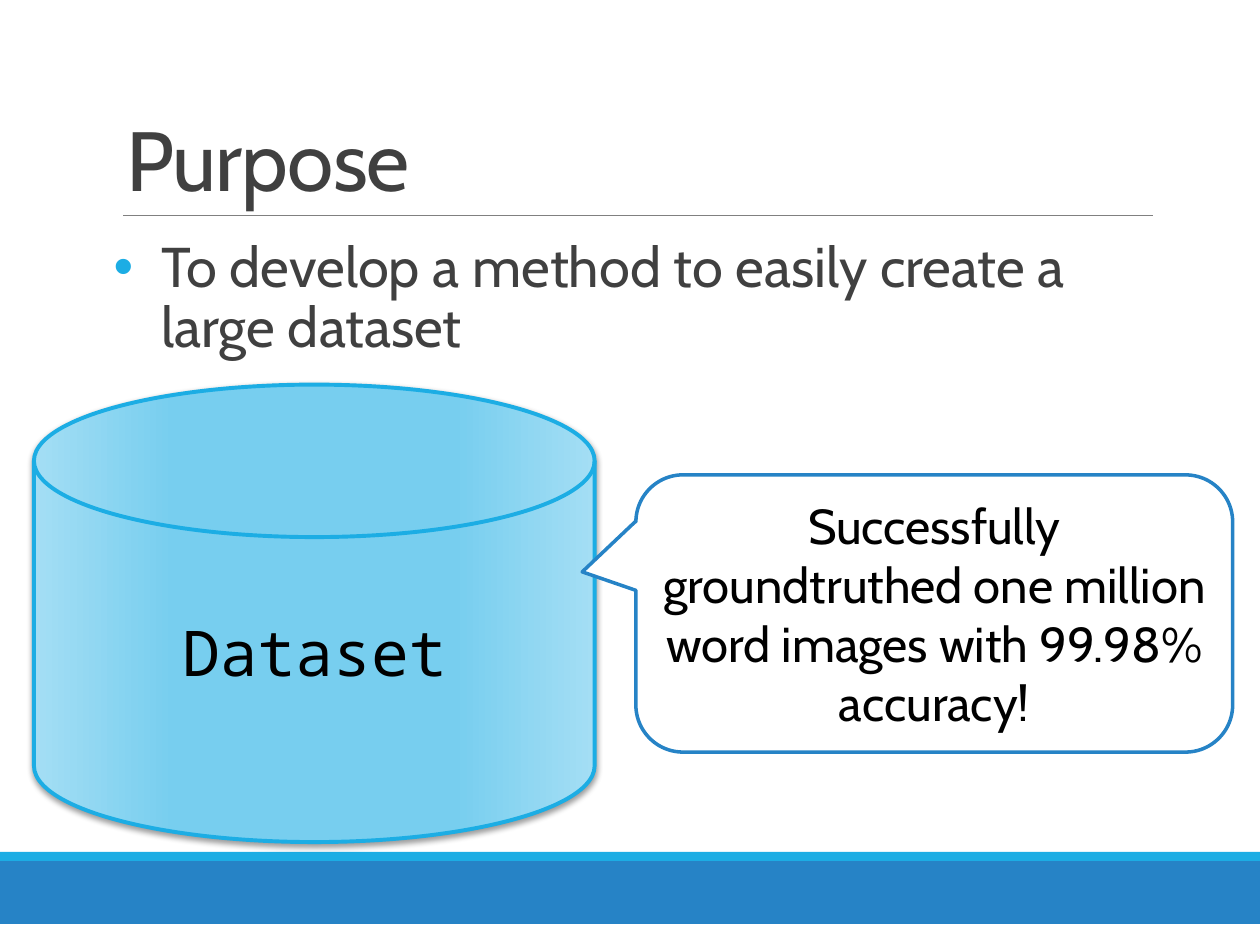
"""Build the Purpose slide with its dataset drum and result callout."""
from dataclasses import dataclass

from lxml import etree
from pptx import Presentation
from pptx import util as u
from pptx.dml.color import RGBColor
from pptx.enum import shapes, text
from pptx.oxml import ns

Pt = u.Pt
COLORS = {
    "blue": "2683C6", "cyan": "1CADE4", "pale": "A4DEF4", "sky": "77CEEF",
    "rule": "808080", "gray": "404040", "black": "000000", "white": "FFFFFF",
}
WIDTH, HEIGHT = 720, 540
DRUM_STOPS = {0: "pale", 25: "sky", 50: "sky", 75: "sky", 100: "pale"}


@dataclass(frozen=True)
class Box:
    left: float
    top: float
    width: float
    height: float

    def lengths(self) -> tuple:
        return tuple(Pt(value) for value in (self.left, self.top, self.width, self.height))


@dataclass(frozen=True)
class Words:
    content: str
    size: float
    color: str
    font: str = "Cabin"


def rgb(name: str) -> RGBColor:
    """Return the named colour."""
    return RGBColor.from_string(COLORS[name])


def add_element(parent, tag: str, **attributes: str):
    """Append a drawing element with its attributes."""
    return etree.SubElement(parent, ns.qn(tag), attributes)


def set_all(target, values: dict) -> None:
    """Set every attribute given in the dict."""
    for name, value in values.items():
        setattr(target, name, value)


def write(shape, words: Words, frame_format: dict, paragraph_format: dict):
    """Write one formatted paragraph and return it."""
    set_all(shape.text_frame, {"word_wrap": True, **frame_format})
    paragraph = shape.text_frame.paragraphs[0]
    set_all(paragraph, paragraph_format)
    run = paragraph.add_run()
    run.text = words.content
    set_all(run.font, {"name": words.font, "size": Pt(words.size)})
    run.font.color.rgb = rgb(words.color)
    return paragraph


def add_shape(slide, kind, box: Box, fill: str, line: str = "", weight: float = 0):
    """Add a preset shape with a flat fill and an optional outline."""
    shape = slide.shapes.add_shape(kind, *box.lengths())
    shape.shadow.inherit = False
    shape.fill.solid()
    shape.fill.fore_color.rgb = rgb(fill)
    if line:
        shape.line.color.rgb = rgb(line)
        shape.line.width = Pt(weight)
    else:
        shape.line.fill.background()
    return shape


def add_rule(slide, left: float, right: float, top: float) -> None:
    """Add the thin rule under the title."""
    rule = slide.shapes.add_connector(
        shapes.MSO_CONNECTOR.STRAIGHT, Pt(left), Pt(top), Pt(right), Pt(top))
    rule.line.color.rgb = rgb("rule")
    rule.line.width = Pt(0.5)
    add_element(rule._element.spPr, "a:effectLst")


def add_bullet(paragraph, color: str, indent: float) -> None:
    """Give the paragraph a coloured hanging bullet."""
    properties = paragraph._p.get_or_add_pPr()
    properties.set("marL", str(Pt(indent)))
    properties.set("indent", str(-Pt(indent)))
    add_element(add_element(properties, "a:buClr"), "a:srgbClr", val=COLORS[color])
    add_element(properties, "a:buFont", typeface="Arial")
    add_element(properties, "a:buChar", char="•")


def shade(shape, stops: dict) -> None:
    """Fill the shape from left to right with the colour stops."""
    shape.fill.gradient()
    shape.fill.gradient_angle = 0
    stop_list = shape._element.spPr.find(".//" + ns.qn("a:gsLst"))
    for stop in list(stop_list):
        stop_list.remove(stop)
    for position, color in stops.items():
        stop = add_element(stop_list, "a:gs", pos=str(position * 1000))
        add_element(stop, "a:srgbClr", val=COLORS[color])


def add_shadow(shape, blur: float, distance: float, opacity: int) -> None:
    """Drop a soft black shadow straight below the shape."""
    effects = shape._element.spPr.find(ns.qn("a:effectLst"))
    shadow = add_element(effects, "a:outerShdw", blurRad=str(Pt(blur)), dist=str(Pt(distance)),
                         dir="5400000", rotWithShape="0")
    color = add_element(shadow, "a:srgbClr", val=COLORS["black"])
    add_element(color, "a:alpha", val=str(opacity * 1000))


def main() -> None:
    """Draw the slide and save it."""
    presentation = Presentation()
    set_all(presentation, {"slide_width": Pt(WIDTH), "slide_height": Pt(HEIGHT)})
    slide = presentation.slides.add_slide(presentation.slide_layouts[6])
    preset = shapes.MSO_SHAPE
    centered = {"alignment": text.PP_ALIGN.CENTER}
    middle = {"vertical_anchor": text.MSO_ANCHOR.MIDDLE}

    add_shape(slide, preset.RECTANGLE, Box(0, 492, WIDTH, 36), "blue")
    add_shape(slide, preset.RECTANGLE, Box(0, 486.8, WIDTH, 5.2), "cyan")
    add_rule(slide, 70.5, 658.8, 123)

    title = slide.shapes.add_textbox(*Box(65, 8.5, 594, 114.5).lengths())
    heading = write(title, Words("Purpose", 48, "gray"),
                    {"vertical_anchor": text.MSO_ANCHOR.BOTTOM}, {"line_spacing": 0.85})
    heading.runs[0].font._element.set("spc", "-50")

    body = slide.shapes.add_textbox(*Box(65, 133, 594, 317).lengths())
    purpose = write(body, Words("To develop a method to easily create a large dataset", 32, "gray"),
                    {"margin_left": 0, "margin_right": 0},
                    {"line_spacing": 0.9, "space_after": Pt(2)})
    add_bullet(purpose, "cyan", 27)

    drum = add_shape(slide, preset.FLOWCHART_MAGNETIC_DISK, Box(19.4, 219.8, 320.4, 261.4),
                     "sky", "cyan", 2.25)
    shade(drum, DRUM_STOPS)
    add_shadow(drum, 3.1, 1.6, 38)
    write(drum, Words("Dataset", 36, "black", "Noto Sans Mono"), middle, centered)

    callout = add_shape(slide, preset.ROUNDED_RECTANGULAR_CALLOUT, Box(363.4, 271.4, 341, 158.4),
                        "white", "blue", 2)
    for index, value in enumerate((-0.59, -0.15, 0.17)):
        callout.adjustments[index] = value
    message = "Successfully groundtruthed one million word images with 99.98% accuracy!"
    write(callout, Words(message, 28, "black"), middle, centered)

    presentation.save("out.pptx")


if __name__ == "__main__":
    main()
